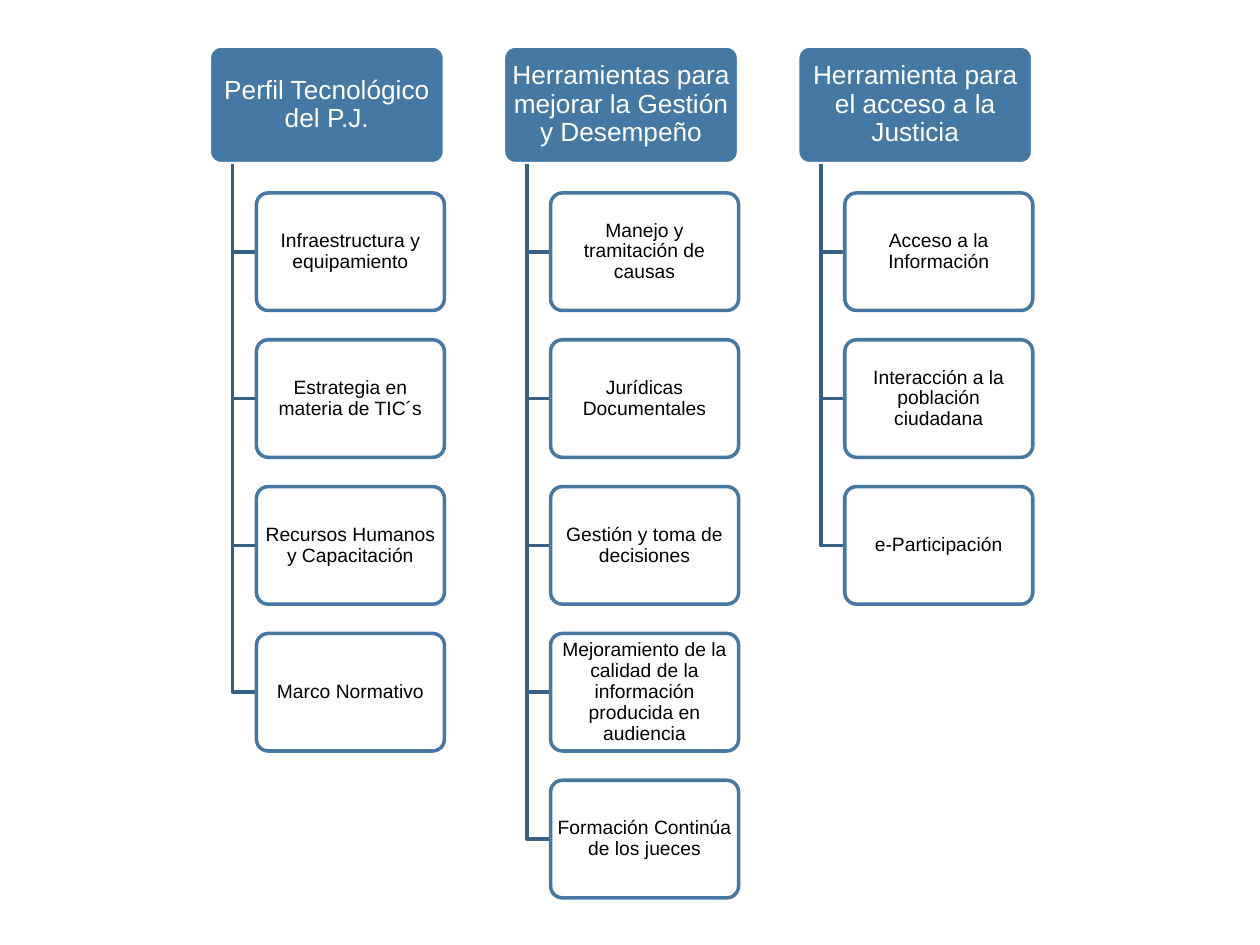
"""Builds a slide with three columns of topics hanging from their headings."""
from lxml import etree
from pptx import Presentation
from pptx import util as u
from pptx.dml import color
from pptx.enum import shapes, text
from pptx.oxml import ns

COLORS = {"blue": "4579A4", "stem": "376183", "white": "FFFFFF", "black": "000000"}

LEFT, TOP = 4.22, 0.93
COLUMN_STEP, ROW_STEP = 5.93, 2.96
BOX_HEIGHT = 2.37
HEADING_WIDTH, TOPIC_WIDTH = 4.74, 3.79
STEM_INDENT, TOPIC_INDENT = 0.47, 0.95

HEADING = {"width": HEADING_WIDTH, "fill": "blue", "line": "white", "font": "white",
           "size": 15, "opacity": 100, "margins": (0.07, 0.05)}
TOPIC = {"width": TOPIC_WIDTH, "fill": "white", "line": "blue", "font": "black",
         "size": 11, "opacity": 90, "margins": (0.05, 0.04)}

COLUMNS = [
    ("Perfil Tecnológico del P.J.",
     ["Infraestructura y equipamiento", "Estrategia en materia de TIC´s",
      "Recursos Humanos y Capacitación", "Marco Normativo"]),
    ("Herramientas para mejorar la Gestión y Desempeño",
     ["Manejo y tramitación de causas", "Jurídicas Documentales",
      "Gestión y toma de decisiones",
      "Mejoramiento de la calidad de la información producida en audiencia",
      "Formación Continúa de los jueces"]),
    ("Herramienta para el acceso a la Justicia",
     ["Acceso a la Información", "Interacción a la población ciudadana",
      "e-Participación"]),
]


def rgb(name):
    """Return the named colour."""
    return color.RGBColor.from_string(COLORS[name])


def apply(target, values):
    """Set each attribute of the target from a dict."""
    for name, value in values.items():
        setattr(target, name, value)


def set_line(shape, name):
    """Give the shape a two-point line and no shadow."""
    shape.shadow.inherit = False
    shape.line.color.rgb = rgb(name)
    shape.line.width = u.Pt(2)


def set_fill(shape, name, opacity):
    """Fill the shape with a colour at a percentage of opacity."""
    shape.fill.solid()
    shape.fill.fore_color.rgb = rgb(name)
    if opacity < 100:
        fill_color = shape.fill._xPr.find(ns.qn("a:solidFill"))[0]
        etree.SubElement(fill_color, ns.qn("a:alpha"), val=str(opacity * 1000))


def add_box(slide, left, top, label, style):
    """Add a rounded box with a centred label."""
    shape = slide.shapes.add_shape(
        shapes.MSO_SHAPE.ROUNDED_RECTANGLE,
        u.Cm(left), u.Cm(top), u.Cm(style["width"]), u.Cm(BOX_HEIGHT))
    shape.adjustments[0] = 0.1
    set_line(shape, style["line"])
    set_fill(shape, style["fill"], style["opacity"])
    side, edge = (u.Cm(margin) for margin in style["margins"])
    apply(shape.text_frame, {
        "word_wrap": True, "vertical_anchor": text.MSO_ANCHOR.MIDDLE,
        "margin_left": side, "margin_right": side,
        "margin_top": edge, "margin_bottom": edge})
    paragraph = shape.text_frame.paragraphs[0]
    paragraph.text = label
    apply(paragraph, {"alignment": text.PP_ALIGN.CENTER, "line_spacing": 0.9})
    font = paragraph.runs[0].font
    apply(font, {"name": "Arial", "size": u.Pt(style["size"])})
    font.color.rgb = rgb(style["font"])


def add_stem(slide, left, top, right, bottom):
    """Add an elbow line going down and then right."""
    builder = slide.shapes.build_freeform(u.Cm(left), u.Cm(top))
    builder.add_line_segments(
        [(u.Cm(left), u.Cm(bottom)), (u.Cm(right), u.Cm(bottom))], close=False)
    shape = builder.convert_to_shape()
    shape.fill.background()
    set_line(shape, "stem")


def add_column(slide, left, heading, topics):
    """Add a heading with its topics below it."""
    add_box(slide, left, TOP, heading, HEADING)
    topic_left = left + TOPIC_INDENT
    for row, topic in enumerate(topics, start=1):
        top = TOP + row * ROW_STEP
        add_stem(slide, left + STEM_INDENT, TOP + BOX_HEIGHT,
                 topic_left, top + BOX_HEIGHT / 2)
        add_box(slide, topic_left, top, topic, TOPIC)


def main():
    """Build and save the presentation."""
    presentation = Presentation()
    apply(presentation, {"slide_width": u.Cm(25.4), "slide_height": u.Cm(19.05)})
    slide = presentation.slides.add_slide(presentation.slide_layouts[6])
    for index, (heading, topics) in enumerate(COLUMNS):
        add_column(slide, LEFT + index * COLUMN_STEP, heading, topics)
    presentation.save("out.pptx")


if __name__ == "__main__":
    main()
